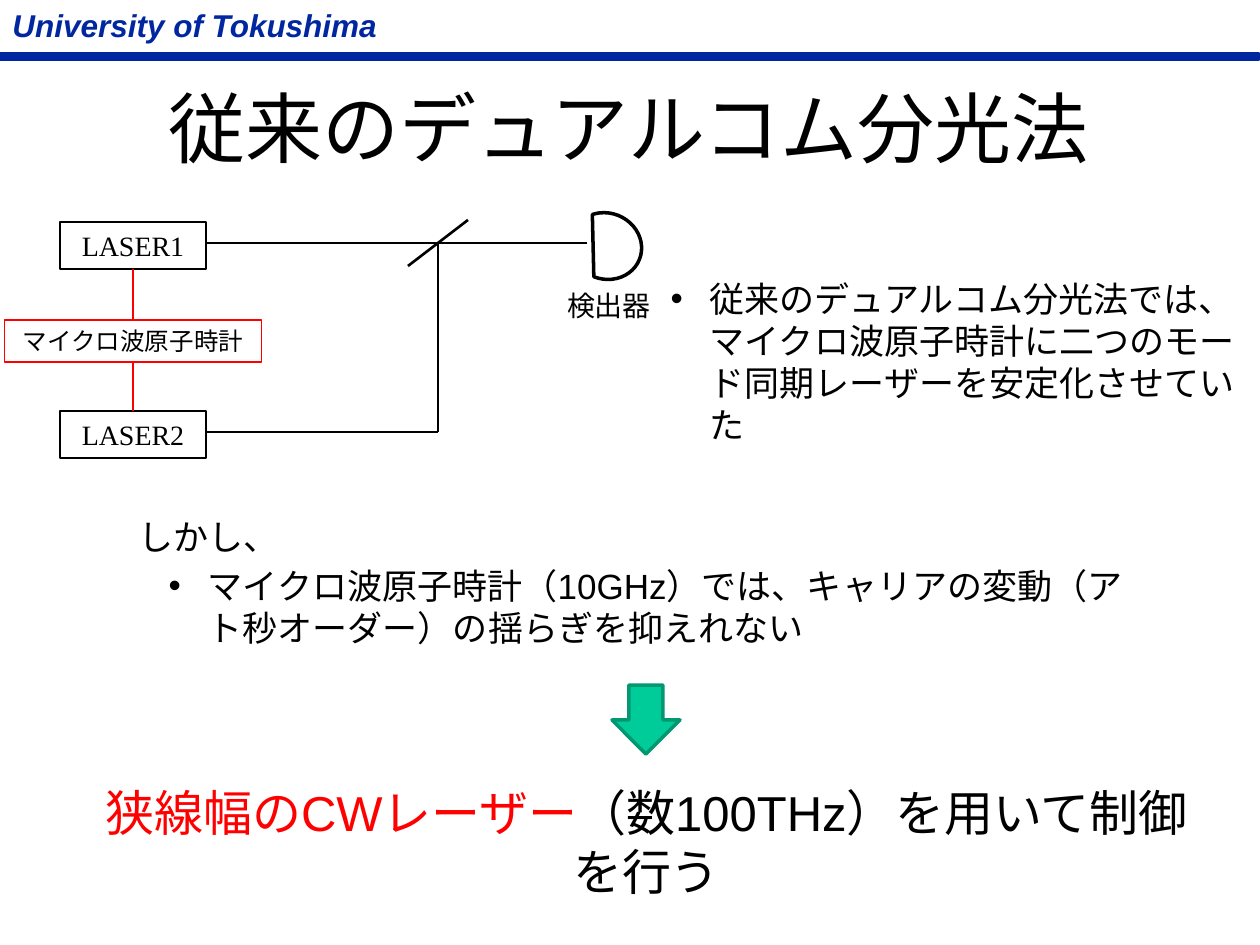
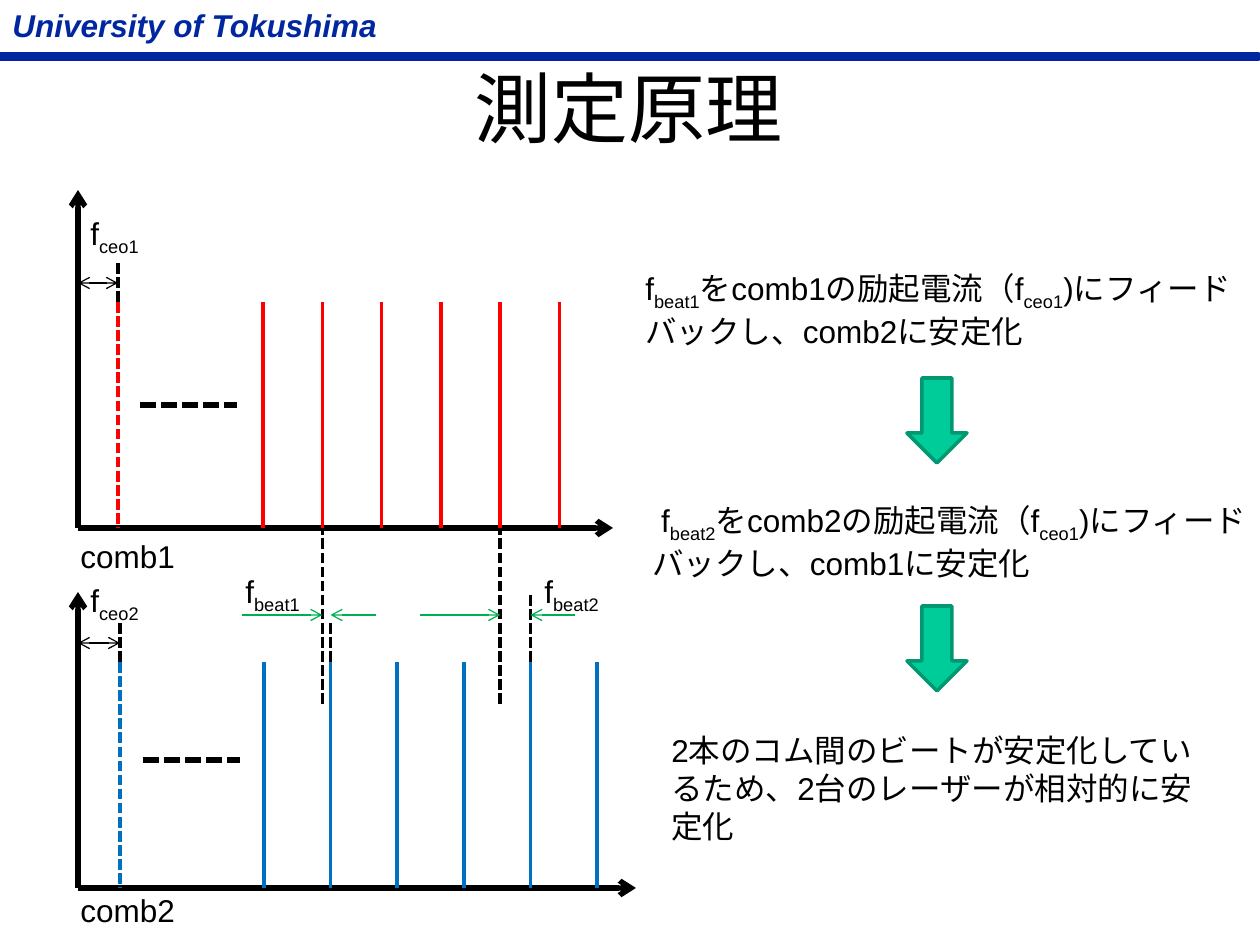
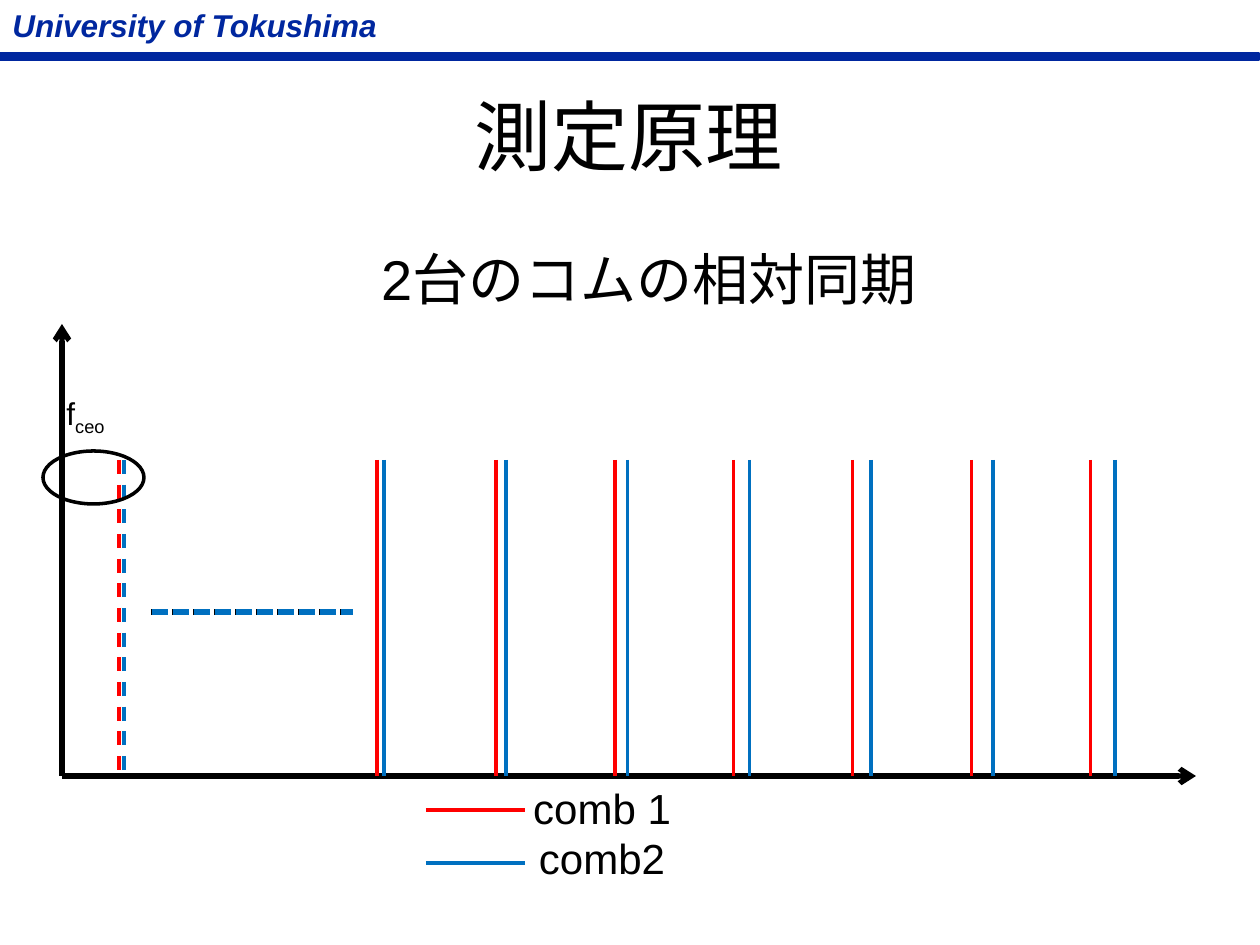
from dataclasses import dataclass

from lxml import etree
from pptx import Presentation
from pptx.dml.color import RGBColor
from pptx.enum.dml import MSO_LINE
from pptx.enum.lang import MSO_LANGUAGE_ID
from pptx.enum.shapes import MSO_CONNECTOR, MSO_SHAPE
from pptx.enum.text import MSO_ANCHOR, MSO_AUTO_SIZE, PP_ALIGN
from pptx.oxml.ns import qn
from pptx.util import Pt

STRAIGHT = MSO_CONNECTOR.STRAIGHT
RECTANGLE, ELLIPSE = MSO_SHAPE.RECTANGLE, MSO_SHAPE.OVAL
CHORD, DOWN_ARROW = MSO_SHAPE.CHORD, MSO_SHAPE.DOWN_ARROW
SHORT_DASH, DASH = MSO_LINE.SQUARE_DOT, MSO_LINE.DASH
LEFT, CENTER = PP_ALIGN.LEFT, PP_ALIGN.CENTER
TOP, MIDDLE = MSO_ANCHOR.TOP, MSO_ANCHOR.MIDDLE
NO_FIT = MSO_AUTO_SIZE.NONE
JAPANESE = MSO_LANGUAGE_ID.JAPANESE

PX = 914400 / 126
SLIDE_SIZE = (1260, 945)
TWO_CONTENT, TITLE_ONLY = 3, 5


@dataclass(frozen=True)
class Theme:
    font: str = "Arial"
    serif: str = "Times New Roman"
    black: str = "000000"
    navy: str = "00279F"
    red: str = "FF0000"
    blue: str = "0070C0"
    green: str = "00B050"
    mint: str = "00CC99"
    mint_edge: str = "009771"
    title: int = 44
    subtitle: int = 32
    conclusion: int = 28
    legend: int = 24
    body: int = 20
    text: int = 18
    label: int = 16
    small: int = 14
    hair: float = 0.75
    thin: float = 1.5
    medium: float = 2
    thick: float = 3
    line_height: float = 2.1  # px for each point of type size
    padding: int = 13
    bullet_indent: int = 39


THEME = Theme()

# Pens: colour, width, dash, arrow ends
PENS = {
    "beam": (THEME.black, THEME.hair, None, ()),
    "mirror": (THEME.black, THEME.thin, None, ()),
    "lock": (THEME.red, THEME.thin, None, ()),
    "axis": (THEME.black, THEME.thick, None, ("tailEnd",)),
    "gap": (THEME.black, THEME.thick, SHORT_DASH, ()),
    "blue gap": (THEME.blue, THEME.thick, SHORT_DASH, ()),
    "guide": (THEME.black, THEME.medium, SHORT_DASH, ()),
    "span": (THEME.black, THEME.hair, None, ("headEnd", "tailEnd")),
    "beat": (THEME.green, THEME.hair, None, ("tailEnd",)),
    "red": (THEME.red, THEME.medium, None, ()),
    "red offset": (THEME.red, THEME.medium, SHORT_DASH, ()),
    "red dash": (THEME.red, THEME.medium, DASH, ()),
    "blue": (THEME.blue, THEME.medium, None, ()),
    "blue offset": (THEME.blue, THEME.medium, SHORT_DASH, ()),
    "blue dash": (THEME.blue, THEME.medium, DASH, ()),
}


# ---- Content: texts are (left, top, width), lines, paragraphs, format ----
def sub(text):
    return (text, {"subscript": True})


def feedback(lead, beat, source, target):
    return [[lead, sub(beat), f"を{source}の励起電流（f", sub("ceo1"),
             f")にフィードバックし、{target}に安定化"]]


HEADER = "University of Tokushima"
TITLE_LEFT, TITLE_WIDTH = 62, 1134

CONVENTIONAL = {
    "layout": TWO_CONTENT,
    "title": ("従来のデュアルコム分光法", 68, 117),
    "bullets": [
        ((658, 271, 612), 3,
         "従来のデュアルコム分光法では、マイクロ波原子時計に二つのモード同期レーザーを安定化させていた"),
        ((156, 558, 1004), 2,
         "マイクロ波原子時計（10GHz）では、キャリアの変動（アト秒オーダー）の揺らぎを抑えれない"),
    ],
    "texts": [
        ((514, 282, 190), 1, [["検出器"]], {"size": THEME.label, "align": CENTER}),
        ((113, 509, 156), 1, [["しかし、"]], {"size": THEME.body, "align": CENTER}),
        ((77, 776, 1139), 1,
         [[("狭線幅のCWレーザー", {"color": THEME.red}), "（数100THz）を用いて制御を行う"]],
         {"size": THEME.conclusion, "align": CENTER}),
    ],
    "arrows": [(612, 685, 68, 69)],
}
LASERS = [("LASER1", 222), ("LASER2", 411)]
CLOCK = ("マイクロ波原子時計", 320)

PRINCIPLE = {
    "layout": TITLE_ONLY,
    "title": ("測定原理", 38, 137),
    "bullets": [],
    "texts": [
        ((633, 263, 612), 2, feedback("f", "beat1", "comb1", "comb2"), {}),
        ((640, 495, 624), 2, feedback(" f", "beat2", "comb2", "comb1"), {}),
        ((659, 725, 561), 3,
         [["2本のコム間のビートが安定化しているため、2台のレーザーが相対的に安定化"]], {}),
    ],
    "arrows": [(907, top, 60, 85) for top in (378, 606)],
}
PANEL_LEFT = 78
PANELS = [
    {"name": "comb1", "name_top": 531, "offset_name": "ceo1", "offset_top": 208,
     "axes": (PANEL_LEFT, 528, 613, 190),
     "comb": {"base": 528, "height": 226, "offset": 118, "first": 263, "step": 59.3,
              "count": 6, "gap": (140, 405, 97), "pens": ("red", "red offset", "gap")}},
    {"name": "comb2", "name_top": 885, "offset_name": "ceo2", "offset_top": 575,
     "axes": (PANEL_LEFT, 888, 636, 592),
     "comb": {"base": 888, "height": 226, "offset": 120, "first": 264, "step": 66.6,
              "count": 6, "gap": (143, 760, 97), "pens": ("blue", "blue offset", "gap")}},
]
# Beats: tooth number, name, left of name, height of guide
BEATS = [(1, "beat1", 233, 40), (4, "beat2", 532, 67)]
BEAT_TOP = 615

SYNCHRONISED = {
    "layout": TITLE_ONLY,
    "title": ("測定原理", 66, 137),
    "bullets": [],
    "texts": [
        ((384, 776, 436), 2, [["comb 1"], ["comb2"]],
         {"size": THEME.legend, "align": CENTER}),
        ((54, 388, 131), 1, [["f", sub("ceo")]], {}),
        ((328, 238, 643), 1, [["2台のコムの相対同期"]],
         {"size": THEME.subtitle, "align": CENTER}),
    ],
    "arrows": [],
}
SHARED_BASE = 776
SHARED_AXES = (62, SHARED_BASE, 1196, 324)
SHARED = {"base": SHARED_BASE, "height": 316, "count": 7}
SHARED_COMBS = [
    {**SHARED, "offset": 119, "first": 377, "step": 118.9,
     "gap": (151, 612, 195), "pens": ("red", "red dash", "gap")},
    {**SHARED, "offset": 124, "first": 384, "step": 121.8,
     "gap": (152, 612, 201), "pens": ("blue", "blue dash", "blue gap")},
]
LEGEND = [("red", 810), ("blue", 863)]


# ---- Drawing helpers ----
def emu(*lengths):
    return [round(length * PX) for length in lengths]


def box_for(corner, lines, size):
    return (*corner, round(lines * size * THEME.line_height + THEME.padding))


def write(shape, paragraphs, size=THEME.text, align=LEFT, anchor=TOP,
          color=THEME.black, name=THEME.font, bold=False, italic=False):
    frame = shape.text_frame
    frame_format = {"word_wrap": True, "auto_size": NO_FIT, "vertical_anchor": anchor}
    for key, value in frame_format.items():
        setattr(frame, key, value)
    for index, runs in enumerate(paragraphs):
        para = frame.add_paragraph() if index else frame.paragraphs[0]
        para.alignment, para.space_before = align, Pt(0)
        for item in runs:
            text, extra = (item, {}) if isinstance(item, str) else item
            span = para.add_run()
            span.text = text
            font_format = {"size": Pt(size), "name": name, "bold": bold,
                           "italic": italic, "language_id": JAPANESE}
            for key, value in font_format.items():
                setattr(span.font, key, value)
            span.font.color.rgb = RGBColor.from_string(extra.get("color", color))
            if extra.get("subscript"):
                span.font._element.set("baseline", "-25000")


def place(shape, box):
    for key, value in zip(("left", "top", "width", "height"), emu(*box)):
        setattr(shape, key, value)


def add_text(page, corner, lines, paragraphs, text_format):
    box = box_for(corner, lines, text_format.get("size", THEME.text))
    shape = page.shapes.add_textbox(*emu(*box))
    write(shape, paragraphs, **text_format)
    return shape


def add_outline(page, kind, box, line=THEME.black, width=THEME.medium, fill=None):
    shape = page.shapes.add_shape(kind, *emu(*box))
    shape.shadow.inherit = False
    shape.line.color.rgb = RGBColor.from_string(line)
    shape.line.width = Pt(width)
    if fill:
        shape.fill.solid()
        shape.fill.fore_color.rgb = RGBColor.from_string(fill)
    else:
        shape.fill.background()
    return shape


def add_line(page, pen, x1, y1, x2, y2):
    color, width, dash, ends = PENS[pen]
    connector = page.shapes.add_connector(STRAIGHT, *emu(x1, y1, x2, y2))
    connector.line.color.rgb = RGBColor.from_string(color)
    connector.line.width = Pt(width)
    if dash:
        connector.line.dash_style = dash
    properties = connector._element.spPr
    for end in ends:
        etree.SubElement(properties.find(qn("a:ln")), qn(f"a:{end}"), type="arrow")
    etree.SubElement(properties, qn("a:effectLst"))


def add_axes(page, left, base, right, top):
    add_line(page, "axis", left, base, left, top)
    add_line(page, "axis", left, base, right, base)


def tooth_x(comb, number):
    return comb["first"] + number * comb["step"]


def add_comb(page, comb):
    tooth_pen, offset_pen, gap_pen = comb["pens"]
    base, top = comb["base"], comb["base"] - comb["height"]
    add_line(page, offset_pen, comb["offset"], top, comb["offset"], base)
    for number in range(comb["count"]):
        x = tooth_x(comb, number)
        add_line(page, tooth_pen, x, top, x, base)
    left, y, length = comb["gap"]
    add_line(page, gap_pen, left, y, left + length, y)


def add_boxed_label(page, text, box, line, **text_format):
    shape = add_outline(page, RECTANGLE, box, line, THEME.hair)
    write(shape, [[text]], align=CENTER, anchor=MIDDLE, **text_format)


# ---- Diagrams ----
def draw_setup(page):
    left, width, splitter = 60, 146, 438
    middle, right = left + width / 2, left + width
    boxes = []
    for name, top in LASERS:
        box = box_for((left, top, width), 1, THEME.label)
        add_boxed_label(page, name, box, THEME.black,
                        size=THEME.label, name=THEME.serif)
        boxes.append(box)
    name, top = CLOCK
    clock_width = 257
    clock = box_for((middle - clock_width / 2, top, clock_width), 1, THEME.small)
    add_boxed_label(page, name, clock, THEME.red, size=THEME.small)
    stack = [boxes[0], clock, boxes[1]]
    for upper, lower in zip(stack, stack[1:]):
        add_line(page, "lock", middle, upper[1] + upper[3], middle, lower[1])

    upper_beam, lower_beam = (top + 21 for _, top in LASERS)
    add_line(page, "beam", right, upper_beam, 587, upper_beam)
    add_line(page, "beam", right, lower_beam, splitter, lower_beam)
    add_line(page, "beam", splitter, upper_beam, splitter, lower_beam)
    add_line(page, "mirror", splitter + 30, upper_beam - 23,
             splitter - 30, upper_beam + 23)
    detector = add_outline(page, CHORD, (570, 213, 72, 66))
    detector.rotation = 201.6


def draw_beats(page):
    for panel in PANELS:
        comb = panel["comb"]
        offset, top = comb["offset"], comb["base"] - comb["height"]
        add_axes(page, *panel["axes"])
        add_comb(page, comb)
        add_line(page, "guide", offset, top, offset, top - 39)
        add_line(page, "span", PANEL_LEFT, top - 19, offset, top - 19)
        add_text(page, (68, panel["name_top"], 179), 1, [[panel["name"]]], {})
        add_text(page, (PANEL_LEFT, panel["offset_top"], 96), 1,
                 [["f", sub(panel["offset_name"])]], {})
    red, blue = (panel["comb"] for panel in PANELS)
    blue_top = blue["base"] - blue["height"]
    for number, name, left, height in BEATS:
        red_x, blue_x = tooth_x(red, number), tooth_x(blue, number)
        add_line(page, "guide", red_x, blue_top + 42, red_x, red["base"])
        add_line(page, "guide", blue_x, blue_top, blue_x, blue_top - height)
        add_line(page, "beat", red_x - 80, BEAT_TOP, red_x, BEAT_TOP)
        add_line(page, "beat", blue_x + 45, BEAT_TOP, blue_x, BEAT_TOP)
        add_text(page, (left, BEAT_TOP - 49, 100), 1, [["f", sub(name)]], {})


def draw_synchronised(page):
    add_axes(page, *SHARED_AXES)
    for comb in SHARED_COMBS:
        add_comb(page, comb)
    add_outline(page, ELLIPSE, (43, 451, 101, 53))
    for pen, y in LEGEND:
        add_line(page, pen, 426, y, 525, y)


# ---- Slides ----
def add_master_header(deck, page):
    """Draw the header on a page, then move it to the master all slides share."""
    band = add_outline(page, RECTANGLE, (0, 53, 1259, 7), THEME.navy, 1, THEME.navy)
    name = add_text(page, (0, 0, 400), 1, [[HEADER]],
                    {"color": THEME.navy, "bold": True, "italic": True})
    for number, shape in enumerate((band, name), start=100):
        shape._element.nvSpPr.cNvPr.set("id", str(number))
        deck.slide_master.shapes._spTree.append(shape._element)


def build_slide(deck, content, draw):
    page = deck.slides.add_slide(deck.slide_layouts[content["layout"]])
    title, top, height = content["title"]
    place(page.shapes.title, (TITLE_LEFT, top, TITLE_WIDTH, height))
    write(page.shapes.title, [[title]], size=THEME.title, align=CENTER, anchor=MIDDLE)
    bodies = list(page.placeholders)[1:]
    indent, = emu(THEME.bullet_indent)
    for body, (corner, lines, text) in zip(bodies, content["bullets"]):
        place(body, box_for(corner, lines, THEME.body))
        write(body, [[text]], size=THEME.body)
        properties = body.text_frame.paragraphs[0]._p.get_or_add_pPr()
        for key, value in {"marL": indent, "indent": -indent}.items():
            properties.set(key, str(value))
    draw(page)
    for box in content["arrows"]:
        add_outline(page, DOWN_ARROW, box, THEME.mint_edge, fill=THEME.mint)
    for text in content["texts"]:
        add_text(page, *text)
    return page


def main():
    deck = Presentation()
    deck.slide_width, deck.slide_height = emu(*SLIDE_SIZE)
    first_page = build_slide(deck, CONVENTIONAL, draw_setup)
    build_slide(deck, PRINCIPLE, draw_beats)
    build_slide(deck, SYNCHRONISED, draw_synchronised)
    add_master_header(deck, first_page)
    deck.save("out.pptx")


if __name__ == "__main__":
    main()
